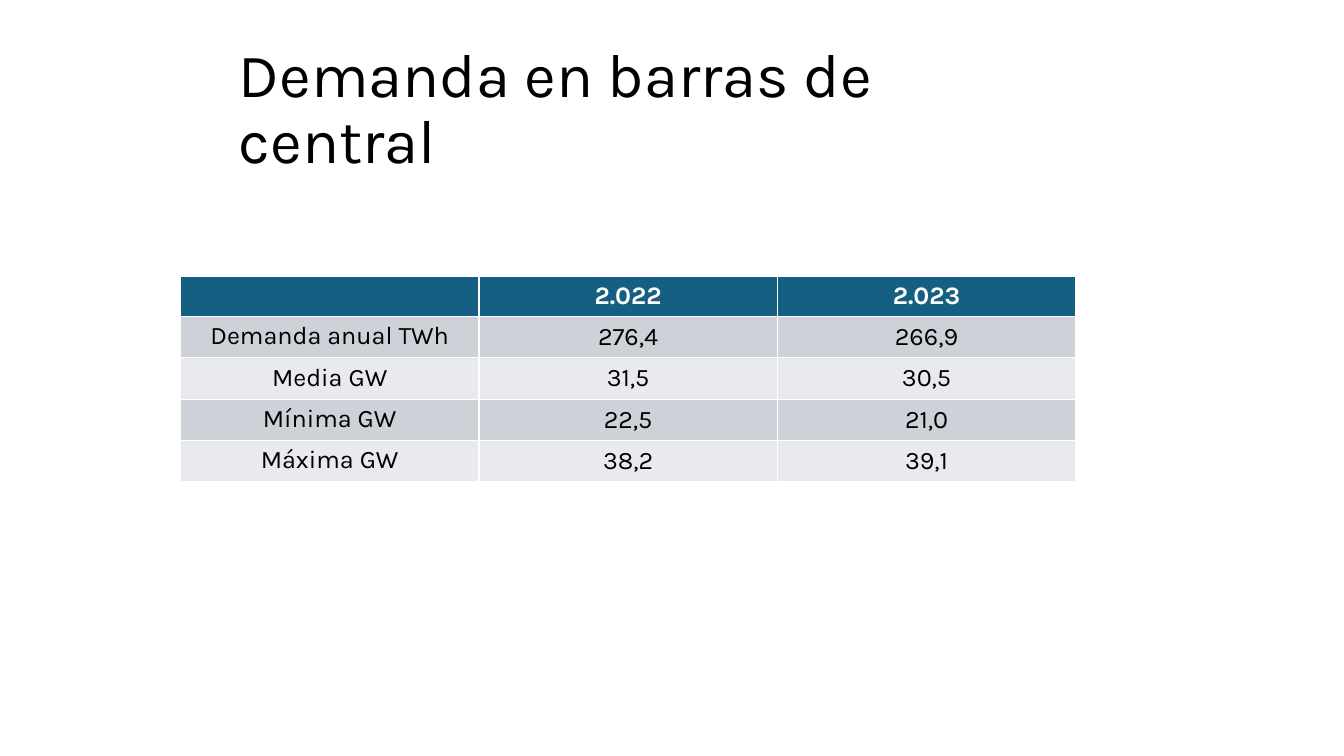
import pptx
import pptx.dml.color
import pptx.enum.text
import pptx.util

Inches = pptx.util.Inches
MIDDLE = pptx.enum.text.MSO_ANCHOR.MIDDLE


def style_font(font, size, color, bold=False):
    font.name = "Karla"
    font.size = pptx.util.Pt(size)
    font.bold = bold
    font.color.rgb = pptx.dml.color.RGBColor.from_string(color)


prs = pptx.Presentation()
prs.slide_width = Inches(13.33)
prs.slide_height = Inches(7.5)
s = prs.slides.add_slide(prs.slide_layouts[6])

# Title
title = s.shapes.add_textbox(Inches(2.27), Inches(0.37), Inches(7.94), Inches(1.45))
tf = title.text_frame
tf.word_wrap = True
tf.vertical_anchor = MIDDLE
p = tf.paragraphs[0]
p.text = "Demanda en barras de central"
p.line_spacing = 0.9
style_font(p.font, 44, "000000")

# Demand table; the default table style draws the white cell borders
demand = [
    ("", "2.022", "2.023"),
    ("Demanda anual TWh", "276,4", "266,9"),
    ("Media GW", "31,5", "30,5"),
    ("Mínima GW", "22,5", "21,0"),
    ("Máxima GW", "38,2", "39,1"),
]
table = s.shapes.add_table(len(demand), 3, Inches(1.79), Inches(2.74),
                           Inches(8.89), Inches(2.02)).table
for column in table.columns:
    column.width = Inches(2.96)

for i, values in enumerate(demand):
    header = i == 0
    table.rows[i].height = Inches(0.38 if header else 0.41)
    fill = "156082" if header else ("E8EAED", "CCD2D8")[i % 2]
    for j, value in enumerate(values):
        cell = table.cell(i, j)
        cell.fill.solid()
        cell.fill.fore_color.rgb = pptx.dml.color.RGBColor.from_string(fill)
        if j > 0:
            cell.vertical_anchor = MIDDLE
        p = cell.text_frame.paragraphs[0]
        p.text = value
        p.alignment = pptx.enum.text.PP_ALIGN.CENTER
        style_font(p.font, 18, "FFFFFF" if header else "000000", header)

prs.save("out.pptx")
